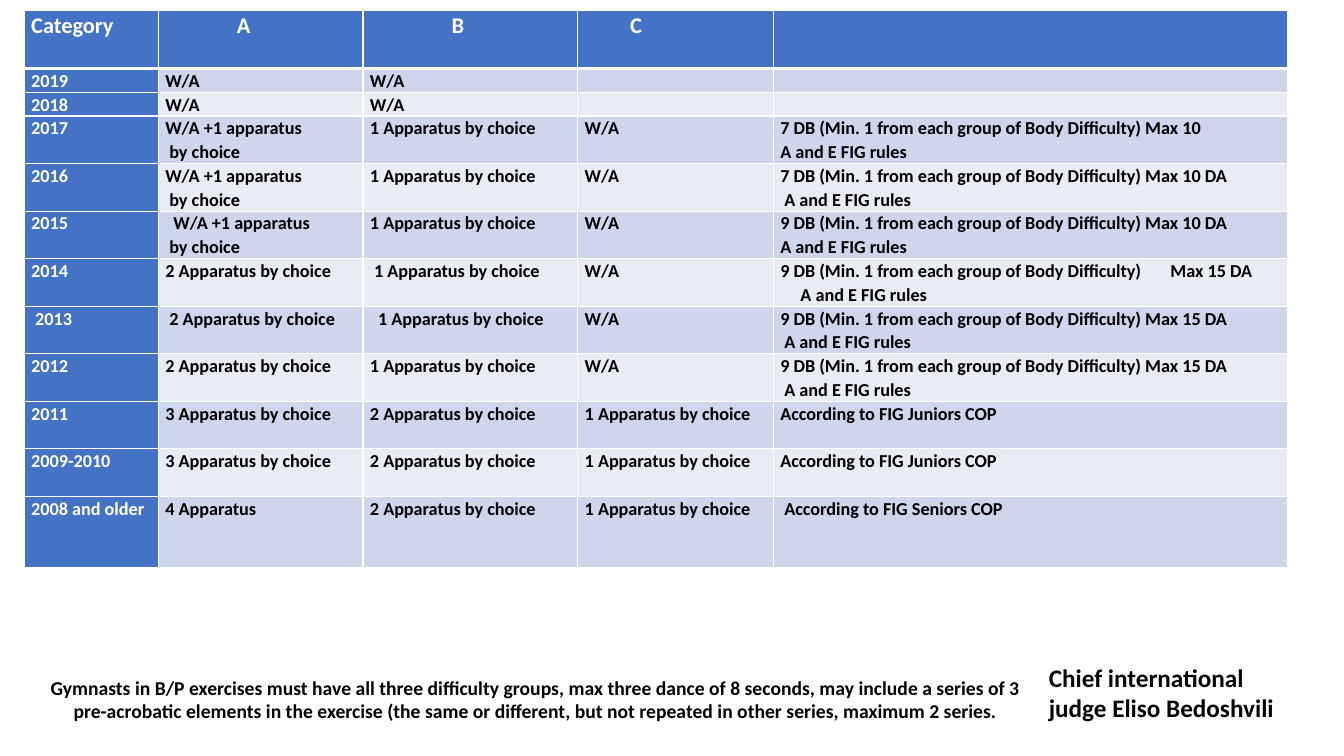
from lxml.etree import SubElement
from pptx import Presentation
from pptx.dml.color import RGBColor
from pptx.enum.text import MSO_AUTO_SIZE, PP_ALIGN
from pptx.oxml.ns import qn
from pptx.util import Inches, Pt

WHITE = RGBColor(0xFF, 0xFF, 0xFF)
BLACK = RGBColor(0x00, 0x00, 0x00)
BLUE = RGBColor(0x44, 0x72, 0xC4)
BANDS = (RGBColor(0xCF, 0xD5, 0xEA), RGBColor(0xE9, 0xEB, 0xF5))
FONT = "Calibri"

# Table grid in inches; row heights count lines of text
COLUMN_WIDTHS = (1.33, 2.03, 2.13, 1.94, 5.1)
HEADER_HEIGHT = 0.58
LINE_HEIGHT = 0.236
ROW_LINES = (1, 1) + (2,) * 8 + (3,)
SPACE = 0.04  # small indent of some entries

# A cell is a list of lines; a line is a text or a (text, indent) pair
HEADER = (["Category"], [("A", 0.71)], [("B", 0.81)], [("C", 0.45)], [])
ONE = "1 Apparatus by choice"
TWO = "2 Apparatus by choice"
THREE = "3 Apparatus by choice"
WARM_UP = "W/A +1 apparatus"
CHOICE = ("by choice", SPACE)
GROUPS = "DB (Min. 1 from each group of Body Difficulty)"
RULES = "A and E FIG rules"
JUNIORS = "According to FIG Juniors COP"
CATEGORIES = (
    (["2019"], ["W/A"], ["W/A"], [], []),
    (["2018"], ["W/A"], ["W/A"], [], []),
    (["2017"], [WARM_UP, CHOICE], [ONE], ["W/A"],
     [f"7 {GROUPS} Max 10", RULES]),
    (["2016"], [WARM_UP, CHOICE], [ONE], ["W/A"],
     [f"7 {GROUPS} Max 10 DA", (RULES, SPACE)]),
    (["2015"], [(WARM_UP, 2 * SPACE), CHOICE], [ONE], ["W/A"],
     [f"9 {GROUPS} Max 10 DA", RULES]),
    (["2014"], [TWO], [(ONE, SPACE)], ["W/A"],
     [f"9 {GROUPS}\tMax 15 DA", (RULES, 5 * SPACE)]),
    ([("2013", SPACE)], [(TWO, SPACE)], [(ONE, 2 * SPACE)], ["W/A"],
     [f"9 {GROUPS} Max 15 DA", (RULES, SPACE)]),
    (["2012"], [TWO], [ONE], ["W/A"],
     [f"9 {GROUPS} Max 15 DA", (RULES, SPACE)]),
    (["2011"], [THREE], [TWO], [ONE], [JUNIORS]),
    (["2009-2010"], [THREE], [TWO], [ONE], [JUNIORS]),
    (["2008 and older"], ["4 Apparatus"], [TWO], [ONE],
     [("According to FIG Seniors COP", SPACE)]),
)


def write(frame, lines, size, color=BLACK, align=None, spacing=None, tab=3.87):
    """Fill a text frame with one paragraph per line."""
    for number, line in enumerate(lines or [""]):
        text, indent = line if isinstance(line, tuple) else (line, 0)
        paragraph = frame.paragraphs[0] if number == 0 else frame.add_paragraph()
        paragraph.alignment = align
        paragraph.line_spacing = spacing
        properties = paragraph._p.get_or_add_pPr()
        if indent:
            properties.set("marL", str(Inches(indent)))
        if "\t" in text:
            stops = SubElement(properties, qn("a:tabLst"))
            SubElement(stops, qn("a:tab"), pos=str(Inches(tab)), algn="l")
        if not text:
            SubElement(paragraph._p, qn("a:endParaRPr"), sz=str(size * 100))
            continue
        run = paragraph.add_run()
        run.text = text
        run.font.name, run.font.size, run.font.bold = FONT, Pt(size), True
        run.font.color.rgb = color


class ProgramSlide:
    def __init__(self, presentation):
        self.width = presentation.slide_width
        self.height = presentation.slide_height
        self.slide = presentation.slides.add_slide(presentation.slide_layouts[6])

    def place(self, left, top, width, height):
        """Turn shares of the slide into lengths."""
        return (int(left * self.width), int(top * self.height),
                int(width * self.width), int(height * self.height))

    def note(self, text, box, size, align=None):
        frame = self.slide.shapes.add_textbox(*self.place(*box)).text_frame
        frame.word_wrap = True
        frame.auto_size = MSO_AUTO_SIZE.SHAPE_TO_FIT_TEXT
        write(frame, [text], size, align=align)

    def border(self, cell, side, weight):
        line = SubElement(cell._tc.get_or_add_tcPr(), qn(f"a:ln{side}"),
                          w=str(Pt(weight)))
        fill = SubElement(line, qn("a:solidFill"))
        SubElement(fill, qn("a:srgbClr"), val=str(WHITE))

    def cell(self, cell, lines, row, column):
        is_header = row == 0
        cell.margin_left = cell.margin_right = Inches(0.07)
        cell.margin_top = cell.margin_bottom = 0
        for side in "LRTB":
            thick = (is_header and side == "B") or (row == 1 and side == "T")
            self.border(cell, side, 3 if thick else 1)
        is_label = is_header or column == 0
        cell.fill.solid()
        cell.fill.fore_color.rgb = BLUE if is_label else BANDS[(row - 1) % 2]
        write(cell.text_frame, lines, 16 if is_header else 13,
              color=WHITE if is_label else BLACK, spacing=1.07)

    def table(self, rows, left, top):
        heights = [HEADER_HEIGHT] + [n * LINE_HEIGHT for n in ROW_LINES]
        box = self.place(left, top, 0, 0)[:2]
        table = self.slide.shapes.add_table(
            len(rows), len(COLUMN_WIDTHS), *box,
            Inches(sum(COLUMN_WIDTHS)), Inches(sum(heights))).table
        for column, width in zip(table.columns, COLUMN_WIDTHS):
            column.width = Inches(width)
        for r, (entries, height) in enumerate(zip(rows, heights)):
            table.rows[r].height = Inches(height)
            for c, lines in enumerate(entries):
                self.cell(table.cell(r, c), lines, r, c)


def main():
    presentation = Presentation()
    presentation.slide_width = Inches(13.33)
    presentation.slide_height = Inches(7.5)
    program = ProgramSlide(presentation)

    # Apparatus by year of birth
    program.table((HEADER, *CATEGORIES), left=0.018, top=0.0133)

    # Signature and rule for the exercises
    program.note("Chief international judge Eliso Bedoshvili",
                 (0.773, 0.869, 0.199, 0.095), 18)
    program.note(
        "Gymnasts in B/P exercises must have all three difficulty groups, "
        "max three dance of 8 seconds, may include a series of 3 "
        "pre-acrobatic elements in the exercise (the same or different, "
        "but not repeated in other series, maximum 2 series.",
        (0.0285, 0.887, 0.74, 0.076), 14, align=PP_ALIGN.CENTER)

    presentation.save("out.pptx")


if __name__ == "__main__":
    main()
